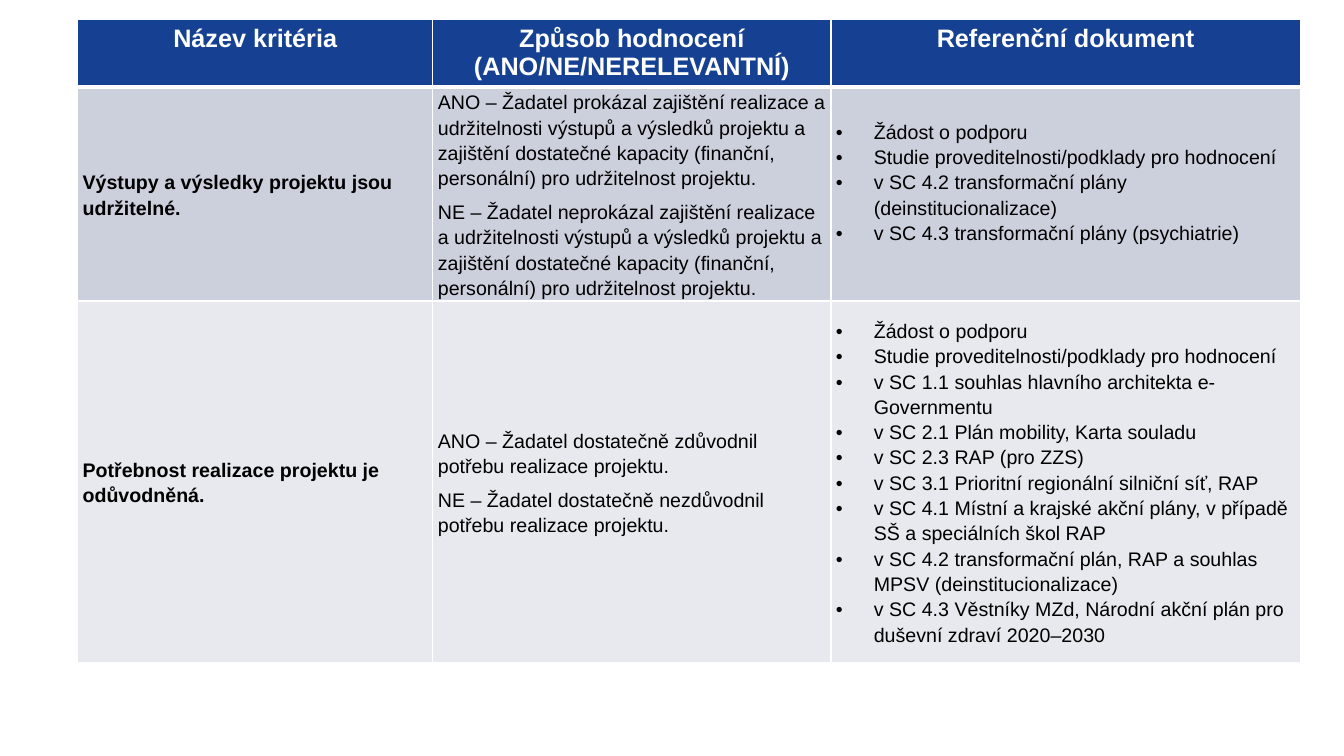
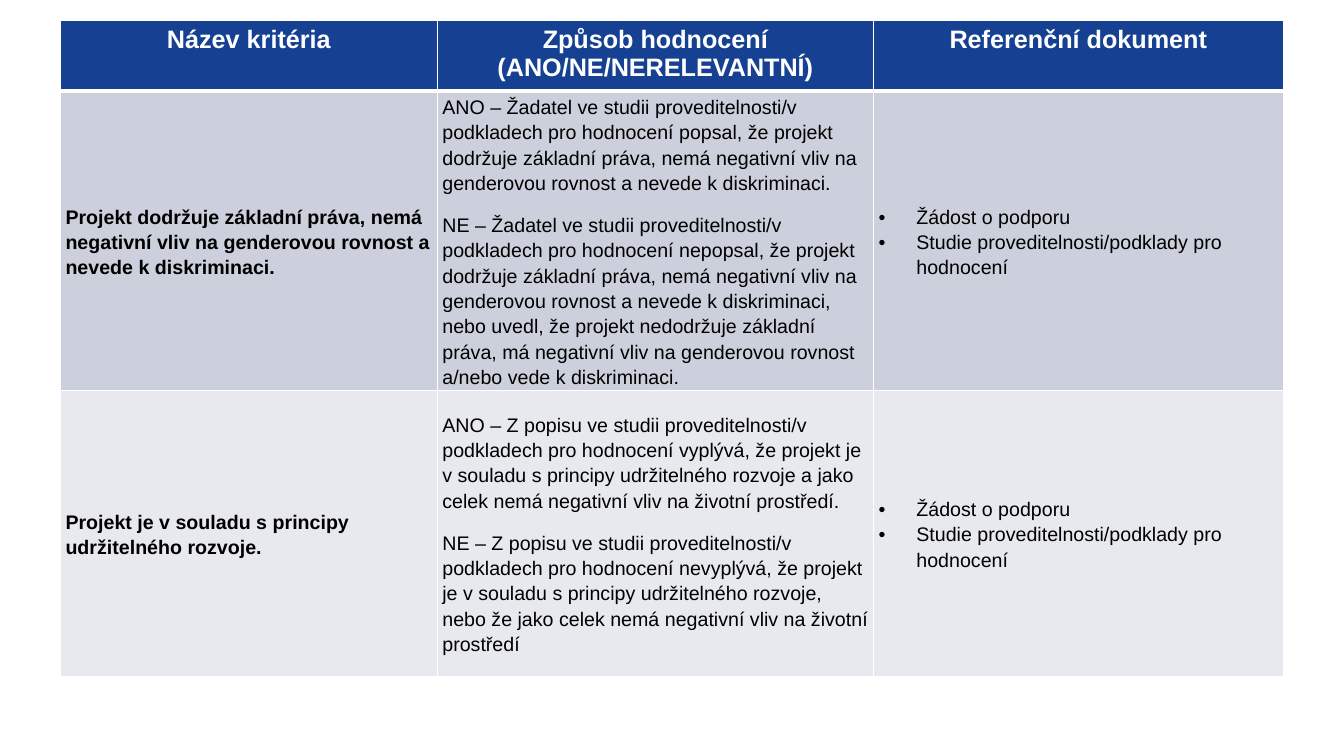
import pptx
import pptx.dml.color
import pptx.enum.text
import pptx.oxml.ns
import pptx.util
from lxml import etree

Pt = pptx.util.Pt
ALIGN = pptx.enum.text.PP_ALIGN
ANCHOR = pptx.enum.text.MSO_ANCHOR

FONT = "Arial"
WHITE, BLACK, BLUE = "FFFFFF", "000000", "164193"
BAND_FILLS = ("CCCFDC", "E8E9EE")
HEADINGS = (
    "Název kritéria",
    "Způsob hodnocení (ANO/NE/NERELEVANTNÍ)",
    "Referenční dokument",
)
COMMON_DOCUMENTS = ["Žádost o podporu", "Studie proveditelnosti/podklady pro hodnocení"]

SUSTAINABILITY_CRITERIA = [
    {
        "name": "Výstupy a výsledky projektu jsou udržitelné.",
        "ratings": [
            "ANO – Žadatel prokázal zajištění realizace a udržitelnosti výstupů a výsledků "
            "projektu a zajištění dostatečné kapacity (finanční, personální) pro udržitelnost projektu.",
            "NE – Žadatel neprokázal zajištění realizace a udržitelnosti výstupů a výsledků "
            "projektu a zajištění dostatečné kapacity (finanční, personální) pro udržitelnost projektu.",
        ],
        "documents": COMMON_DOCUMENTS + [
            "v SC 4.2 transformační plány (deinstitucionalizace)",
            "v SC 4.3 transformační plány (psychiatrie)",
        ],
        "documents_bottom": 18.5,
    },
    {
        "name": "Potřebnost realizace projektu je odůvodněná.",
        "ratings": [
            "ANO – Žadatel dostatečně zdůvodnil potřebu realizace projektu.",
            "NE – Žadatel dostatečně nezdůvodnil potřebu realizace projektu.",
        ],
        "documents": COMMON_DOCUMENTS + [
            "v SC 1.1 souhlas hlavního architekta e-Governmentu",
            "v SC 2.1 Plán mobility, Karta souladu",
            "v SC 2.3 RAP (pro ZZS)",
            "v SC 3.1 Prioritní regionální silniční síť, RAP",
            "v SC 4.1 Místní a krajské akční plány, v případě SŠ a speciálních škol RAP",
            "v SC 4.2 transformační plán, RAP a souhlas MPSV (deinstitucionalizace)",
            "v SC 4.3 Věstníky MZd, Národní akční plán pro duševní zdraví 2020–2030",
        ],
    },
]

PRINCIPLES_CRITERIA = [
    {
        "name": "Projekt dodržuje základní práva, nemá negativní vliv na genderovou rovnost "
                "a nevede k diskriminaci.",
        "ratings": [
            "ANO – Žadatel ve studii proveditelnosti/v podkladech pro hodnocení popsal, že projekt "
            "dodržuje základní práva, nemá negativní vliv na genderovou rovnost a nevede k diskriminaci.",
            "NE – Žadatel ve studii proveditelnosti/v podkladech pro hodnocení nepopsal, že projekt "
            "dodržuje základní práva, nemá negativní vliv na genderovou rovnost a nevede k diskriminaci, "
            "nebo uvedl, že projekt nedodržuje základní práva, má negativní vliv na genderovou rovnost "
            "a/nebo vede k diskriminaci.",
        ],
        "documents": COMMON_DOCUMENTS,
    },
    {
        "name": "Projekt je v souladu s principy udržitelného rozvoje.",
        "ratings": [
            "ANO – Z popisu ve studii proveditelnosti/v podkladech pro hodnocení vyplývá, že projekt je "
            "v souladu s principy udržitelného rozvoje a jako celek nemá negativní vliv na životní prostředí.",
            "NE – Z popisu ve studii proveditelnosti/v podkladech pro hodnocení nevyplývá, že projekt je "
            "v souladu s principy udržitelného rozvoje, nebo že jako celek nemá negativní vliv na životní "
            "prostředí",
        ],
        "documents": COMMON_DOCUMENTS,
    },
]


def rgb(value):
    """Return the colour for a hex string."""
    return pptx.dml.color.RGBColor.from_string(value)


def add_child(parent, tag, **attributes):
    """Append a drawing element with its attributes."""
    return etree.SubElement(parent, pptx.oxml.ns.qn(tag), attributes)


def style_cell(cell, fill, bottom_border=1):
    """Give a cell its white borders and its fill."""
    properties = cell._tc.get_or_add_tcPr()
    for side, width in (("L", 1), ("R", 1), ("T", 1), ("B", bottom_border)):
        border = add_child(properties, f"a:ln{side}", w=str(Pt(width)))
        add_child(add_child(border, "a:solidFill"), "a:srgbClr", val=WHITE)
    cell.fill.solid()
    cell.fill.fore_color.rgb = rgb(fill)


def add_text(paragraph, text, size, color, bold):
    """Add one formatted run to a paragraph."""
    run = paragraph.add_run()
    run.text = text
    run.font.name = FONT
    run.font.size = Pt(size)
    run.font.bold = bold
    run.font.color.rgb = rgb(color)


def fill_header(cell, heading):
    """Write a column heading."""
    style_cell(cell, BLUE, bottom_border=3)
    paragraph = cell.text_frame.paragraphs[0]
    paragraph.alignment = ALIGN.CENTER
    add_text(paragraph, heading, 18, WHITE, True)


def fill_body(cell, fill, texts, bold=False, bullets=False, gap=0, bottom=0):
    """Write the paragraphs of a body cell."""
    style_cell(cell, fill)
    cell.vertical_anchor = ANCHOR.MIDDLE
    cell.margin_left = cell.margin_right = Pt(3.6)
    cell.margin_top, cell.margin_bottom = Pt(0), Pt(bottom)
    for index, text in enumerate(texts):
        frame = cell.text_frame
        paragraph = frame.add_paragraph() if index else frame.paragraphs[0]
        if bullets:
            properties = paragraph._p.get_or_add_pPr()
            properties.set("marL", str(Pt(27)))
            properties.set("indent", str(Pt(-27)))
            add_child(properties, "a:buFont", typeface=FONT)
            add_child(properties, "a:buChar", char="•")
        paragraph.line_spacing = 1.15
        paragraph.space_before = Pt(gap if index else 0)
        add_text(paragraph, text, 14, BLACK, bold)


def add_criteria_table(slide, left, top, widths, heights, criteria, rating_gap):
    """Place a table of criteria at the given corner."""
    table = slide.shapes.add_table(
        len(heights), len(widths), Pt(left), Pt(top), Pt(sum(widths)), Pt(sum(heights))
    ).table
    table.horz_banding = False
    for column, width in zip(table.columns, widths):
        column.width = Pt(width)
    for row, height in zip(table.rows, heights):
        row.height = Pt(height)
    for column, heading in enumerate(HEADINGS):
        fill_header(table.cell(0, column), heading)
    for row, (criterion, fill) in enumerate(zip(criteria, BAND_FILLS), start=1):
        fill_body(table.cell(row, 0), fill, [criterion["name"]], bold=True)
        fill_body(table.cell(row, 1), fill, criterion["ratings"], gap=rating_gap)
        fill_body(table.cell(row, 2), fill, criterion["documents"], bullets=True,
                  bottom=criterion.get("documents_bottom", 0))


def main():
    """Build and save the presentation."""
    deck = pptx.Presentation()
    deck.slide_width, deck.slide_height = Pt(960), Pt(540)
    tables = (
        (55.4, 14, (253.8, 284.4, 335.2), (48.4, 152.6, 258.4), SUSTAINABILITY_CRITERIA, 6),
        (43.2, 14.6, (269.2, 311.6, 292.6), (50.6, 213.8, 204.2), PRINCIPLES_CRITERIA, 12),
    )
    for table in tables:
        slide = deck.slides.add_slide(deck.slide_layouts[6])
        add_criteria_table(slide, *table)
    deck.save("out.pptx")


if __name__ == "__main__":
    main()
